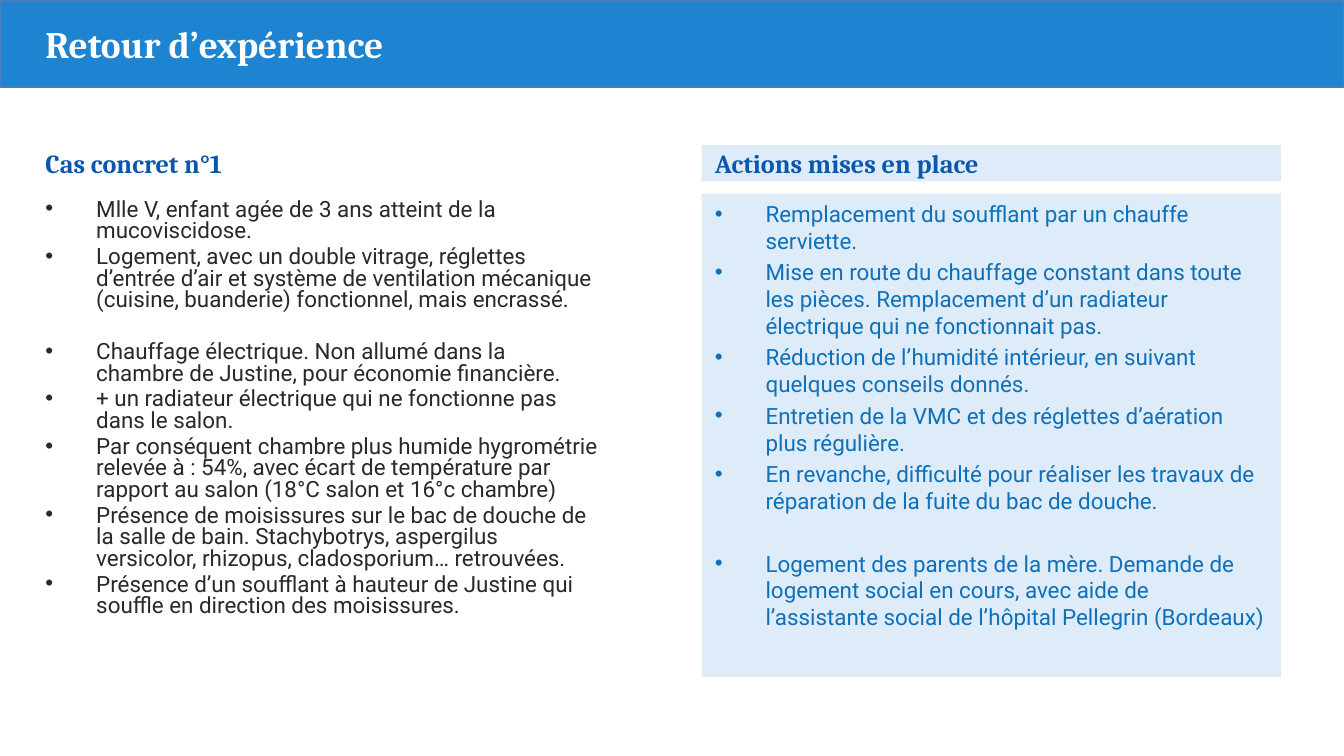
from lxml.etree import SubElement
from pptx import Presentation
from pptx.dml.color import RGBColor
from pptx.enum.shapes import MSO_SHAPE as Shape
from pptx.enum.text import MSO_ANCHOR as Anchor, PP_ALIGN as Align
from pptx.oxml.ns import qn
from pptx.util import Cm, Pt

COLOURS = {
    "banner": "1E84D1",
    "banner_line": "4B7EBC",
    "panel": "DDECF8",
    "title": "FFFFFF",
    "heading": "0A57AE",
    "case": "292929",
    "action": "0F70BA",
}
HEADING_FONT = "Cambria"
BODY_FONT = "Roboto"
LEFT_COLUMN, RIGHT_COLUMN, COLUMN_WIDTH = 0.61, 13.26, 10.95
HEADING_TOP, HEADING_HEIGHT, LIST_TOP = 2.74, 0.69, 3.66
INDENT = Cm(0.96)

CASE_GROUPS = [
    [
        "Mlle V, enfant agée de 3 ans atteint de la mucoviscidose.",
        "Logement, avec un double vitrage, réglettes d’entrée d’air et système de "
        "ventilation mécanique (cuisine, buanderie) fonctionnel, mais encrassé.",
    ],
    [
        "Chauffage électrique. Non allumé dans la chambre de Justine, pour économie financière.",
        "+ un radiateur électrique qui ne fonctionne pas dans le salon.",
        "Par conséquent chambre plus humide hygrométrie relevée à : 54%, avec écart de "
        "température par rapport au salon (18°C salon et 16°c chambre)",
        "Présence de moisissures sur le bac de douche de la salle de bain. Stachybotrys, "
        "aspergilus versicolor, rhizopus, cladosporium… retrouvées.",
        "Présence d’un soufflant à hauteur de Justine qui souffle en direction des moisissures.",
    ],
]
ACTION_GROUPS = [
    [
        "Remplacement du soufflant par un chauffe serviette.",
        "Mise en route du chauffage constant dans toute les pièces. Remplacement d’un "
        "radiateur électrique qui ne fonctionnait pas.",
        "Réduction de l’humidité intérieur, en suivant quelques conseils donnés.",
        "Entretien de la VMC et des réglettes d’aération plus régulière.",
        "En revanche, difficulté pour réaliser les travaux de réparation de la fuite du bac de douche.",
    ],
    [
        "Logement des parents de la mère. Demande de logement social en cours, avec aide de "
        "l’assistante social de l’hôpital Pellegrin (Bordeaux)",
    ],
]


class SlideBuilder:
    def __init__(self, slide):
        self.slide = slide

    def colour(self, name):
        return RGBColor.from_string(COLOURS[name])

    def rectangle(self, left, top, width, height, fill, line=None):
        shape = self.slide.shapes.add_shape(
            Shape.RECTANGLE, Cm(left), Cm(top), Cm(width), Cm(height))
        shape.shadow.inherit = False
        shape.fill.solid()
        shape.fill.fore_color.rgb = self.colour(fill)
        if line:
            shape.line.color.rgb = self.colour(line)
            shape.line.width = Pt(0.75)
        else:
            shape.line.fill.background()
        return shape

    def text_frame(self, left, top, width, height, fill, anchor):
        if fill:
            shape = self.rectangle(left, top, width, height, fill)
        else:
            shape = self.slide.shapes.add_textbox(Cm(left), Cm(top), Cm(width), Cm(height))
        shape.text_frame.word_wrap = True
        shape.text_frame.vertical_anchor = anchor
        return shape.text_frame

    def style(self, paragraph, font, size, colour, bold=False):
        paragraph.alignment = Align.LEFT
        paragraph.font.name = font
        paragraph.font.size = Pt(size)
        paragraph.font.bold = bold
        paragraph.font.color.rgb = self.colour(colour)

    def heading(self, text, left, top, width, height, size, colour, fill=None, anchor=Anchor.MIDDLE):
        paragraph = self.text_frame(left, top, width, height, fill, anchor).paragraphs[0]
        paragraph.text = text
        self.style(paragraph, HEADING_FONT, size, colour, bold=True)

    def bullet_list(self, groups, left, height, colour, group_gap, line_spacing=1.0, fill=None):
        frame = self.text_frame(left, LIST_TOP, COLUMN_WIDTH, height, fill, Anchor.TOP)
        for group_index, group in enumerate(groups):
            for item_index, text in enumerate(group):
                first = group_index == item_index == 0
                paragraph = frame.paragraphs[0] if first else frame.add_paragraph()
                paragraph.text = text
                paragraph.line_spacing = line_spacing
                if not first:
                    paragraph.space_before = Pt(2.4 if item_index else group_gap)
                properties = paragraph._p.get_or_add_pPr()
                properties.set("marL", str(INDENT))
                properties.set("indent", str(-INDENT))
                SubElement(properties, qn("a:buFont"), typeface="Arial")
                SubElement(properties, qn("a:buChar"), char="•")
                self.style(paragraph, BODY_FONT, 12, colour)


def main():
    presentation = Presentation()
    presentation.slide_width = Cm(25.4)
    presentation.slide_height = Cm(14.29)
    builder = SlideBuilder(presentation.slides.add_slide(presentation.slide_layouts[6]))

    builder.rectangle(0, 0.02, 25.4, 1.63, "banner", "banner_line")
    builder.heading("Retour d’expérience", LEFT_COLUMN, 0.28, 24.13, 1.6, 20, "title",
                    anchor=Anchor.TOP)
    builder.bullet_list(CASE_GROUPS, LEFT_COLUMN, 9.58, "case", 16.2, line_spacing=0.8)
    builder.bullet_list(ACTION_GROUPS, RIGHT_COLUMN, 9.14, "action", 19.2, fill="panel")
    for text, left, fill in [("Cas concret n°1", LEFT_COLUMN, None),
                             ("Actions mises en place", RIGHT_COLUMN, "panel")]:
        builder.heading(text, left, HEADING_TOP, COLUMN_WIDTH, HEADING_HEIGHT, 14, "heading", fill)

    presentation.save("out.pptx")


if __name__ == "__main__":
    main()
